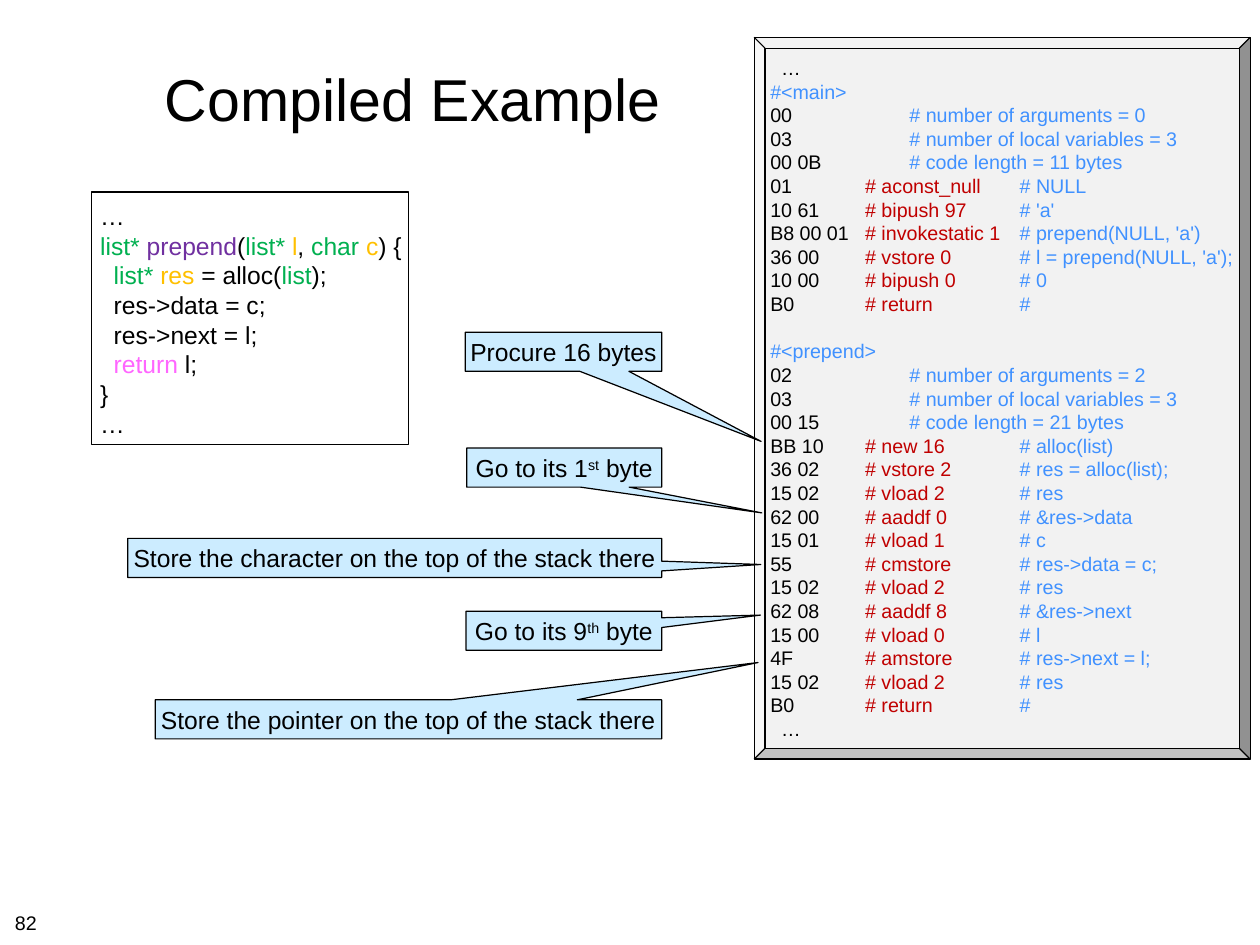
from dataclasses import dataclass

from lxml.etree import SubElement
from pptx import Presentation
from pptx.dml.color import RGBColor
from pptx.enum.shapes import MSO_SHAPE as Preset
from pptx.enum.text import MSO_ANCHOR as Anchor, PP_ALIGN as Align
from pptx.oxml.ns import qn
from pptx.shapes.autoshape import Shape
from pptx.slide import Slide
from pptx.util import Cm, Pt

BLACK, WHITE, PANEL, CALLOUT_BLUE = "000000", "FFFFFF", "F2F2F2", "CCECFF"
BLUE, RED, GREEN = "4091FF", "C00000", "00B050"
PURPLE, ORANGE, PINK = "7030A0", "FFC000", "FF66FF"
HEADER_TABS = (3.99, 7.32)
OPCODE_TABS = (2.72, 7.15)
LISTING_PITCH, SOURCE_PITCH = 19.2, 24.1
CALLOUT_RIGHT, CALLOUT_HEIGHT = 18.97, 1.12


@dataclass
class Span:
    text: str
    color: str = BLACK
    raised: bool = False


@dataclass
class Line:
    spans: list[Span]
    tabs: tuple[float, ...] = ()
    indent: float = 0
    before: float = 0


@dataclass
class Callout:
    spans: list[Span]
    left: float
    top: float
    tip: tuple[float, float]


def rgb(code: str) -> RGBColor:
    return RGBColor.from_string(code)


def write(box: Shape, lines: list[Line], size: float, insets: tuple[float, ...],
          align: Align = Align.LEFT, anchor: Anchor = Anchor.MIDDLE,
          pitch: float | None = None, wrap: bool = False) -> None:
    """Fill a shape with lines; insets are left, top, right, bottom in cm."""
    frame = box.text_frame
    frame.word_wrap = wrap
    frame.vertical_anchor = anchor
    (frame.margin_left, frame.margin_top,
     frame.margin_right, frame.margin_bottom) = map(Cm, insets)
    for index, line in enumerate(lines):
        para = frame.add_paragraph() if index else frame.paragraphs[0]
        properties = para._p.get_or_add_pPr()
        if line.indent:
            properties.set("marL", str(Cm(line.indent)))
            properties.set("indent", "0")
        if line.tabs:
            stops = SubElement(properties, qn("a:tabLst"))
            for position in line.tabs:
                SubElement(stops, qn("a:tab"), pos=str(Cm(position)), algn="l")
        para.alignment = align
        para.font.size = Pt(size)
        para.font.name = "Arial"
        if pitch:
            para.line_spacing = Pt(pitch)
        if line.before:
            para.space_before = Pt(line.before)
        for span in line.spans:
            run = para.add_run()
            run.text = span.text
            run.font.color.rgb = rgb(span.color)
            if span.raised:
                run._r.get_or_add_rPr().set("baseline", "30000")


def add_panel(page: Slide, preset: Preset, area: tuple[float, ...], fill: str) -> Shape:
    panel = page.shapes.add_shape(preset, *map(Cm, area))
    panel.shadow.inherit = False
    panel.fill.solid()
    panel.fill.fore_color.rgb = rgb(fill)
    panel.line.color.rgb = rgb(BLACK)
    panel.line.width = Pt(1)
    return panel


def add_callout(page: Slide, callout: Callout) -> None:
    width = CALLOUT_RIGHT - callout.left
    area = (callout.left, callout.top, width, CALLOUT_HEIGHT)
    box = add_panel(page, Preset.RECTANGULAR_CALLOUT, area, CALLOUT_BLUE)
    tip_x, tip_y = callout.tip
    box.adjustments[0] = (tip_x - callout.left) / width - 0.5
    box.adjustments[1] = (tip_y - callout.top) / CALLOUT_HEIGHT - 0.5
    write(box, [Line(callout.spans)], 20, (0.13,) * 4, Align.CENTER)


def method_lines(name: str, headers: list[tuple[str, str]],
                 opcodes: list[tuple[str, str, str]], before: float = 0) -> list[Line]:
    """Lay out one compiled method: its name, header bytes and instructions."""
    lines = [Line([Span(f"#<{name}>", BLUE)], before=before)]
    for code, note in headers:
        lines.append(Line([Span(f"{code}\t"), Span(f"# {note}", BLUE)], HEADER_TABS))
    for code, opcode, note in opcodes:
        spans = [Span(f"{code}\t"), Span(f"# {opcode}\t", RED), Span(f"# {note}".strip(), BLUE)]
        lines.append(Line(spans, OPCODE_TABS))
    return lines


MAIN = method_lines("main", [
    ("00", "number of arguments = 0"),
    ("03", "number of local variables = 3"),
    ("00 0B", "code length = 11 bytes"),
], [
    ("01", "aconst_null", "NULL"),
    ("10 61", "bipush 97", "'a'"),
    ("B8 00 01", "invokestatic 1", "prepend(NULL, 'a')"),
    ("36 00", "vstore 0", "l = prepend(NULL, 'a');"),
    ("10 00", "bipush 0", "0"),
    ("B0", "return", ""),
])
PREPEND = method_lines("prepend", [
    ("02", "number of arguments = 2"),
    ("03", "number of local variables = 3"),
    ("00 15", "code length = 21 bytes"),
], [
    ("BB 10", "new 16", "alloc(list)"),
    ("36 02", "vstore 2", "res = alloc(list);"),
    ("15 02", "vload 2", "res"),
    ("62 00", "aaddf 0", "&res->data"),
    ("15 01", "vload 1", "c"),
    ("55", "cmstore", "res->data = c;"),
    ("15 02", "vload 2", "res"),
    ("62 08", "aaddf 8", "&res->next"),
    ("15 00", "vload 0", "l"),
    ("4F", "amstore", "res->next = l;"),
    ("15 02", "vload 2", "res"),
    ("B0", "return", ""),
], before=LISTING_PITCH)
ELLIPSIS = Line([Span("…")], indent=0.31)

BODY_INDENT = 0.39
SOURCE = [
    Line([Span("…")]),
    Line([Span("list* ", GREEN), Span("prepend", PURPLE), Span("("), Span("list* ", GREEN),
          Span("l", ORANGE), Span(", "), Span("char ", GREEN), Span("c", ORANGE), Span(") {")]),
    Line([Span("list* ", GREEN), Span("res", ORANGE), Span(" = alloc("),
          Span("list", GREEN), Span(");")], indent=BODY_INDENT),
    Line([Span("res->data = c;")], indent=BODY_INDENT),
    Line([Span("res->next = l;")], indent=BODY_INDENT),
    Line([Span("return", PINK), Span(" l;")], indent=BODY_INDENT),
    Line([Span("}")]),
    Line([Span("…")]),
]

CALLOUTS = [
    Callout([Span("Procure 16 bytes")], 13.34, 9.53, (21.82, 12.66)),
    Callout([Span("Go to its 1"), Span("st", raised=True), Span(" byte")],
            13.38, 12.85, (21.84, 14.71)),
    Callout([Span("Store the character on the top of the stack there")],
            3.66, 15.44, (21.81, 16.19)),
    Callout([Span("Go to its 9"), Span("th", raised=True), Span(" byte")],
            13.36, 17.53, (21.8, 17.64)),
    Callout([Span("Store the pointer on the top of the stack there")],
            4.45, 20.07, (21.73, 19)),
]


def main() -> None:
    deck = Presentation()
    deck.slide_width, deck.slide_height = Cm(36.12), Cm(27.1)
    page = deck.slides.add_slide(deck.slide_layouts[6])
    margins = (0.15,) * 4

    title = page.shapes.add_textbox(Cm(2.64), Cm(0.71), Cm(18.39), Cm(4.17))
    write(title, [Line([Span("Compiled Example")])], 48, margins, Align.CENTER, wrap=True)

    bytecode = add_panel(page, Preset.BEVEL, (21.62, 1.07, 14.22, 20.7), PANEL)
    bytecode.adjustments[0] = 0.022
    write(bytecode, [ELLIPSIS, *MAIN, *PREPEND, ELLIPSIS], 16, margins, pitch=LISTING_PITCH)

    for callout in CALLOUTS:
        add_callout(page, callout)

    number = page.shapes.add_textbox(Cm(0.28), Cm(25.98), Cm(0.94), Cm(0.89))
    write(number, [Line([Span("82")])], 16, margins, anchor=Anchor.TOP)

    source = add_panel(page, Preset.RECTANGLE, (2.62, 5.51, 9.09, 7.24), WHITE)
    write(source, SOURCE, 20, (0.25, 0.25, 0.15, 0.15), anchor=Anchor.TOP, pitch=SOURCE_PITCH)

    deck.save("out.pptx")


if __name__ == "__main__":
    main()
